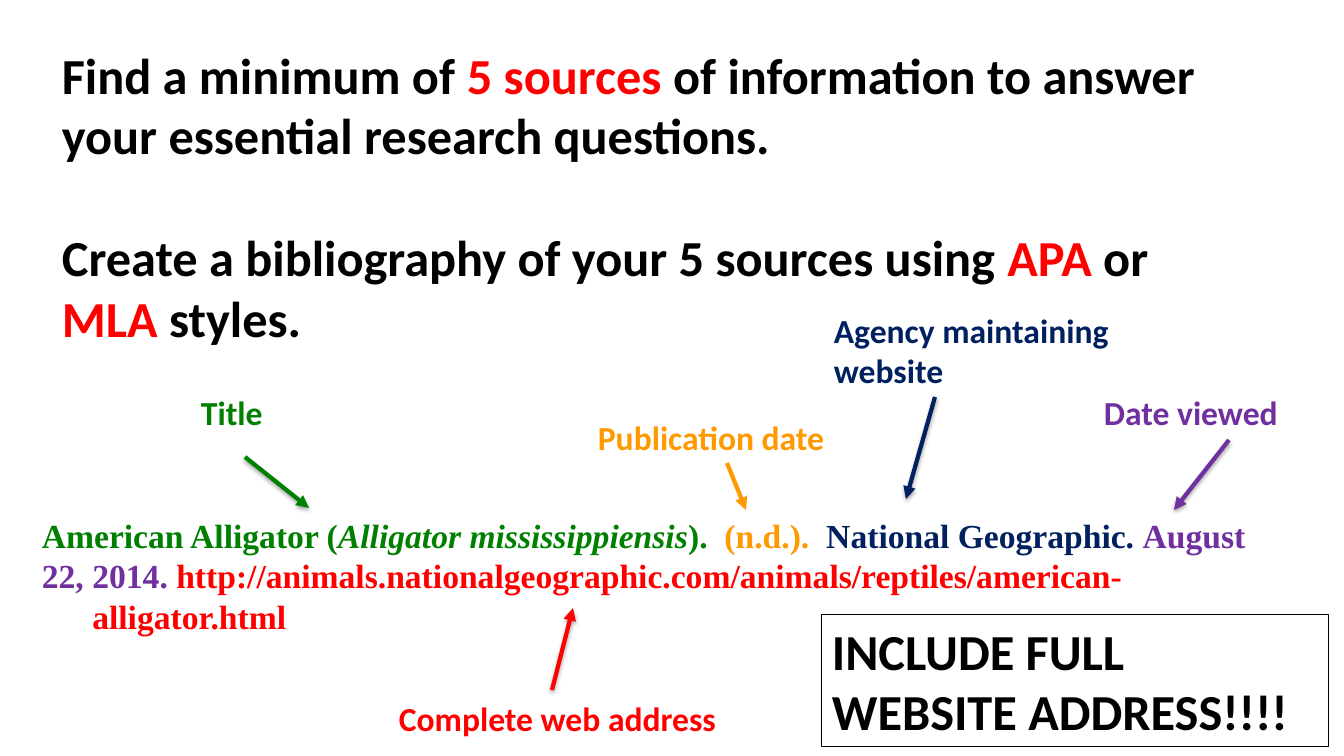
from lxml import etree
from pptx import Presentation
from pptx import util as u
from pptx.dml.color import RGBColor
from pptx.enum import shapes, text
from pptx.oxml.ns import qn

BLACK = RGBColor(0x00, 0x00, 0x00)
RED = RGBColor(0xFF, 0x00, 0x00)
GREEN = RGBColor(0x00, 0x80, 0x00)
ORANGE = RGBColor(0xFF, 0x99, 0x00)
NAVY = RGBColor(0x00, 0x20, 0x60)
PURPLE = RGBColor(0x70, 0x30, 0xA0)

EMU_PER_PX = 914400 / 100.8


def px(length):
    return u.Emu(round(length * EMU_PER_PX))


class SlideBuilder:
    heading_font = "Calibri"
    citation_font = "Times New Roman"

    def __init__(self, deck):
        self.page = deck.slides.add_slide(deck.slide_layouts[6])

    def text(self, place, paragraphs, size, font=heading_font, gap=0):
        """Each paragraph is a list of (wording, colour, italic) spans."""
        box = self.page.shapes.add_textbox(*map(px, place))
        frame = box.text_frame
        frame.word_wrap = True
        frame.auto_size = text.MSO_AUTO_SIZE.SHAPE_TO_FIT_TEXT
        for index, spans in enumerate(paragraphs):
            para = frame.add_paragraph() if index else frame.paragraphs[0]
            if index:
                para.space_before = u.Pt(gap)
            for wording, colour, italic in spans:
                span = para.add_run()
                span.text = wording
                span.font.name = font
                span.font.size = u.Pt(size)
                span.font.bold = True
                span.font.italic = italic
                span.font.color.rgb = colour
        return box

    def label(self, place, wording, colour):
        self.text(place, [[(wording, colour, False)]], 24)

    def framed(self, place, wording):
        box = self.text(place, [[(wording, BLACK, False)]], 36)
        box.line.color.rgb = BLACK
        box.line.width = u.Pt(0.75)

    def arrow(self, start, end, colour, shadow=True):
        line = self.page.shapes.add_connector(
            shapes.MSO_CONNECTOR.STRAIGHT, *map(px, start + end))
        line.line.color.rgb = colour
        line.line.width = u.Pt(3)
        properties = line._element.spPr
        outline = properties.find(qn("a:ln"))
        etree.SubElement(outline, qn("a:tailEnd"), type="triangle")
        effects = etree.SubElement(properties, qn("a:effectLst"))
        if shadow:
            outer = etree.SubElement(
                effects, qn("a:outerShdw"), blurRad=str(u.Pt(3.1)),
                dist=str(u.Pt(1.8)), dir="5400000", rotWithShape="0")
            shade = etree.SubElement(outer, qn("a:srgbClr"), val=str(BLACK))
            etree.SubElement(shade, qn("a:alpha"), val="35000")


def main():
    deck = Presentation()
    deck.slide_width, deck.slide_height = px(1344), px(756)
    slide = SlideBuilder(deck)

    # Assignment
    slide.text((52, 39, 1212, 499), [
        [("Find a minimum of ", BLACK, False),
         ("5 sources ", RED, False),
         ("of information to answer your essential research questions.",
          BLACK, False)],
        [("Create a bibliography of your 5 sources using ", BLACK, False),
         ("APA", RED, False),
         (" or ", BLACK, False),
         ("MLA", RED, False),
         (" styles.", BLACK, False)],
    ], 36, gap=44)

    # Sample citation
    slide.text((32, 510, 1293, 132), [
        [("American Alligator (", GREEN, False),
         ("Alligator mississippiensis", GREEN, True),
         (").  ", GREEN, False),
         ("(n.d.).  ", ORANGE, False),
         ("National Geographic. ", NAVY, False),
         ("August \t22, 2014. ", PURPLE, False),
         ("http://animals.nationalgeographic.com/animals/reptiles/american-",
          RED, False)],
        [("\talligator.html", RED, False)],
    ], 24, font=slide.citation_font)

    # Labels for the parts of the citation
    slide.label((191, 387, 368, 50), "Title", GREEN)
    slide.label((824, 305, 368, 92), "Agency maintaining website", NAVY)
    slide.label((1094, 387, 391, 50), "Date viewed", PURPLE)
    slide.label((389, 693, 368, 50), "Complete web address", RED)
    slide.label((588, 412, 277, 50), "Publication date", ORANGE)

    # Arrows from the labels to the citation
    slide.arrow((245, 457), (309, 508), GREEN)
    slide.arrow((935, 397), (906, 499), NAVY)
    slide.arrow((1229, 440), (1174, 510), PURPLE)
    slide.arrow((552, 690), (573, 608), RED)
    slide.arrow((727, 463), (746, 510), ORANGE, shadow=False)

    # Reminder
    slide.framed((822, 615, 507, 132), "INCLUDE FULL WEBSITE ADDRESS!!!!")

    deck.save("out.pptx")


if __name__ == "__main__":
    main()
